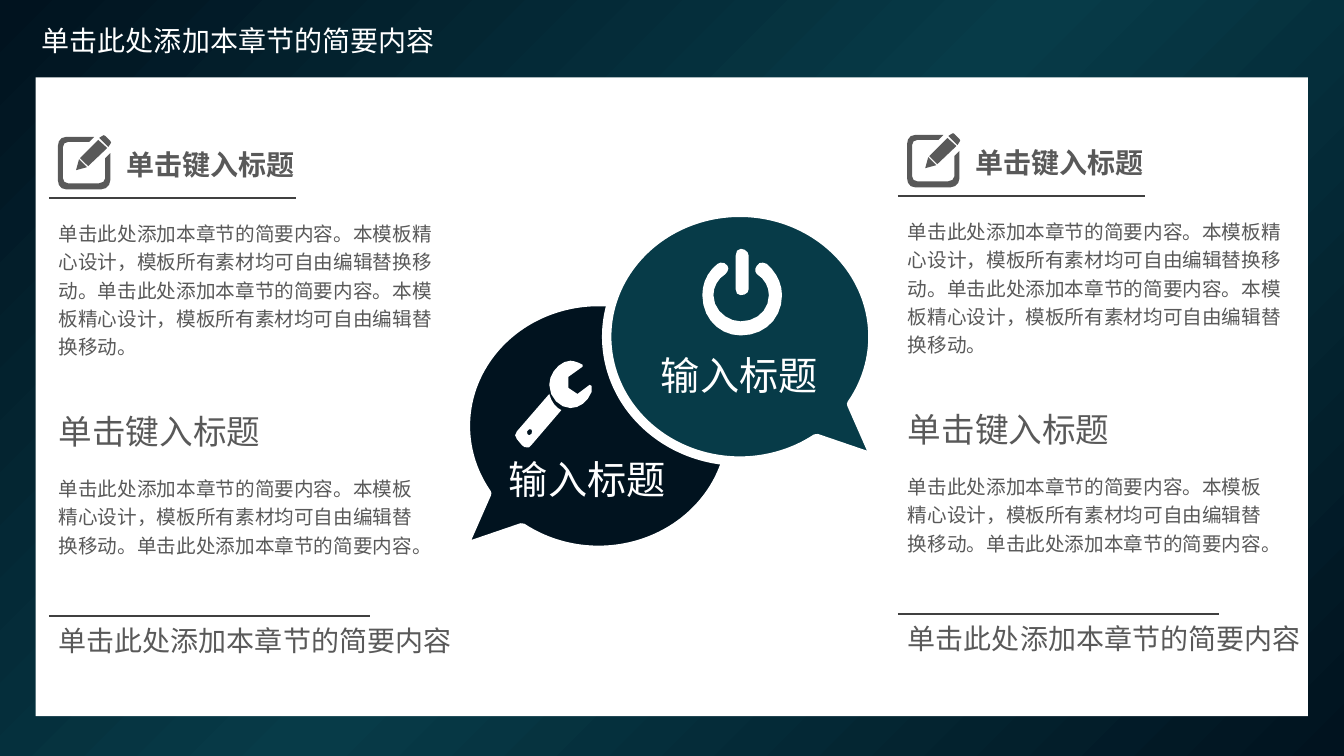
from copy import deepcopy
from lxml.etree import SubElement
from pptx import Presentation
from pptx.dml.color import RGBColor as RGB
from pptx.enum.shapes import MSO_CONNECTOR as LINK, MSO_SHAPE as SHAPE
from pptx.enum.text import MSO_ANCHOR as ANCHOR, PP_ALIGN as ALIGN
from pptx.oxml.ns import qn
from pptx.util import Cm, Pt

FONT = "Noto Sans CJK SC"
HEX = {"night": "01131F", "teal": "073B48", "white": "FFFFFF",
       "gray": "595959", "rule": "404040"}
INK = {name: RGB.from_string(code) for name, code in HEX.items()}
FINE = 20  # drawing units per hundredth of an inch

# Icon contours in hundredths of an inch: pairs are corners, sixes are curves
PEN = [
    [(52, 9), (50, 12), (41, 3), (44, 1), (45, 0, 46, 0, 47, 1), (52, 6),
     (53, 7, 53, 8, 52, 9)],
    [(30, 31), (22, 23), (40, 5), (49, 13)],
    [(29, 32), (18, 35), (21, 24)],
    [(10, 7), (7, 7, 5, 9, 5, 12), (5, 43), (5, 46, 7, 48, 10, 48), (41, 48),
     (44, 48, 47, 46, 47, 43), (47, 23), (52, 18), (52, 45),
     (52, 50, 48, 54, 43, 54), (8, 54), (3, 54, 0, 50, 0, 45), (0, 11),
     (0, 6, 3, 2, 8, 2), (36, 2), (31, 7)],
]
POWER = [
    [(38, 86), (17, 86, 0, 69, 0, 46), (0, 34, 5, 23, 15, 15),
     (17, 13, 23, 13, 25, 17), (27, 19, 25, 23, 23, 25),
     (15, 30, 11, 38, 11, 46), (11, 61, 25, 72, 38, 72),
     (54, 72, 66, 61, 66, 46), (66, 38, 62, 30, 54, 25),
     (52, 23, 52, 19, 54, 17), (56, 13, 60, 13, 64, 15),
     (73, 23, 79, 34, 79, 46), (79, 69, 62, 86, 38, 86)],
    [(46, 40), (46, 44, 42, 46, 38, 46), (35, 46, 33, 44, 33, 40), (33, 7),
     (33, 3, 35, 0, 38, 0), (42, 0, 46, 3, 46, 7)],
]
WRENCH = [
    [(16, 84), (14, 86), (12, 86), (10, 86, 9, 86, 7, 84), (2, 78),
     (0, 74), (2, 70), (34, 33), (36, 41, 41, 47, 46, 49)],
    [(14, 68), (12, 70), (12, 72, 12, 74, 14, 74),
     (16, 74, 17, 72, 17, 70), (17, 68, 16, 68, 14, 68)],
    [(76, 31), (72, 41, 64, 47, 55, 47), (45, 47, 34, 37, 34, 24),
     (34, 12, 45, 0, 55, 0), (58, 0, 64, 2, 67, 4), (67, 6), (53, 16),
     (53, 27), (62, 33), (74, 24), (76, 25)],
]


def write(box, text, size, ink, bold=False, align=ALIGN.LEFT):
    """Fill a text box or placeholder with one formatted paragraph."""
    frame = box.text_frame
    frame.text = text
    frame.word_wrap = True
    frame.vertical_anchor = ANCHOR.MIDDLE
    para = frame.paragraphs[0]
    para.alignment = align
    if size == 14:
        para.line_spacing = 1.2
    font = para.runs[0].font
    font.name, font.size, font.bold = FONT, Pt(size), bold
    font.color.rgb = INK[ink]
    SubElement(para.runs[0]._r.get_or_add_rPr(), qn("a:ea"), typeface=FONT)


def draw(icon, x, y, ink):
    """Draw the contours of an icon as one outline, curves cut into steps."""
    pen = None
    for first, *rest in icon:
        start = [FINE * v for v in first]
        if pen is None:
            pen = shapes.build_freeform(*start, scale=Cm(2.54) / 100 / FINE)
        else:
            pen.move_to(*start)
        dots, last = [], first
        for part in rest:
            if len(part) == 6:
                ends = (last, part[:2], part[2:4], part[4:])
                span = max(abs(part[4] - last[0]), abs(part[5] - last[1]))
                count = 2 + span // 8
                for step in range(1, count + 1):
                    t = step / count
                    mix = ((1 - t)**3, 3 * t * (1 - t)**2, 3 * t**2 * (1 - t), t**3)
                    dots.append([FINE * sum(m * e[k] for m, e in zip(mix, ends))
                                 for k in (0, 1)])
            else:
                dots.append([FINE * v for v in part])
            last = part[-2:]
        pen.add_line_segments(dots, close=True)
    shape = pen.convert_to_shape(Cm(x), Cm(y))
    shape.shadow.inherit = False
    shape.fill.solid()
    shape.fill.fore_color.rgb = INK[ink]
    shape.line.fill.background()


deck = Presentation()
deck.slide_width, deck.slide_height = Cm(33.87), Cm(19.05)
slide = deck.slides.add_slide(deck.slide_layouts[5])
shapes = slide.shapes

# Background: dark corners, teal diagonal
fill = slide.background.fill
fill.gradient()
fill.gradient_angle = 315
stops = slide.element.find(".//" + qn("a:gsLst"))
stops.append(deepcopy(stops[0]))
for stop, place, ink in zip(fill.gradient_stops, (0, 0.5, 1), ("night", "teal", "night")):
    stop.position = place
    stop.color.rgb = INK[ink]

panel = shapes.add_shape(SHAPE.RECTANGLE, Cm(0.9), Cm(1.95), Cm(32.06), Cm(16.1))
panel.shadow.inherit = False
panel.fill.solid()
panel.fill.fore_color.rgb = INK["white"]
panel.line.fill.background()

title = shapes.title
title.left, title.top, title.width, title.height = Cm(0.8), Cm(0.46), Cm(11.28), Cm(1.12)
write(title, "单击此处添加本章节的简要内容", 20, "white")

# Speech bubbles: left, top, tail side, colour, icon with its place, label place
bubbles = [
    (11.73, 7.6, -0.51, "night", WRENCH, 12.98, 9.09, 12.3, 11.34),
    (15.29, 5.35, 0.51, "teal", POWER, 17.7, 6.27, 16.13, 8.72),
]
for x, y, tail, ink, icon, left, top, tag_x, tag_y in bubbles:
    bubble = shapes.add_shape(SHAPE.OVAL_CALLOUT, Cm(x), Cm(y), Cm(6.71), Cm(6.27))
    bubble.adjustments[0], bubble.adjustments[1] = tail, 0.49
    bubble.shadow.inherit = False
    bubble.fill.solid()
    bubble.fill.fore_color.rgb = INK[ink]
    bubble.line.color.rgb = INK["white"]
    bubble.line.width = Pt(6.75)
    draw(icon, left, top, "white")
    tag = shapes.add_textbox(Cm(tag_x), Cm(tag_y), Cm(5), Cm(1.45))
    write(tag, "输入标题", 28, "white", align=ALIGN.CENTER)

# Text columns: drop from column top, indent, width, height, size, bold, text
texts = [
    (3.59, 1.7, 5.54, 1.12, 20, True, "单击键入标题"),
    (5.34, 0, 10.1, 3.83, 14, False,
     "单击此处添加本章节的简要内容。本模板精心设计，模板所有素材均可自由编辑替换移动。"
     "单击此处添加本章节的简要内容。本模板精心设计，模板所有素材均可自由编辑替换移动。"),
    (10.23, 0, 6, 1.28, 24, False, "单击键入标题"),
    (11.77, 0, 9.65, 2.4, 14, False,
     "单击此处添加本章节的简要内容。本模板精心设计，模板所有素材均可自由编辑替换移动。"
     "单击此处添加本章节的简要内容。"),
    (15.58, 0, 10.49, 1.12, 20, False, "单击此处添加本章节的简要内容"),
]
rules = [(4.98, 6.22), (15.52, 8.1)]
for x, y in ((1.23, 0), (22.63, -0.05)):
    draw(PEN, x + 0.23, y + 3.4, "gray")
    for drop, length in rules:
        rule = shapes.add_connector(LINK.STRAIGHT, Cm(x), Cm(y + drop),
                                    Cm(x + length), Cm(y + drop))
        rule.line.color.rgb = INK["rule"]
        rule.line.width = Pt(1.25)
        SubElement(rule._element.spPr, qn("a:effectLst"))
    for drop, indent, wide, high, size, bold, text in texts:
        box = shapes.add_textbox(Cm(x + indent), Cm(y + drop), Cm(wide), Cm(high))
        write(box, text, size, "gray", bold)

deck.save("out.pptx")
